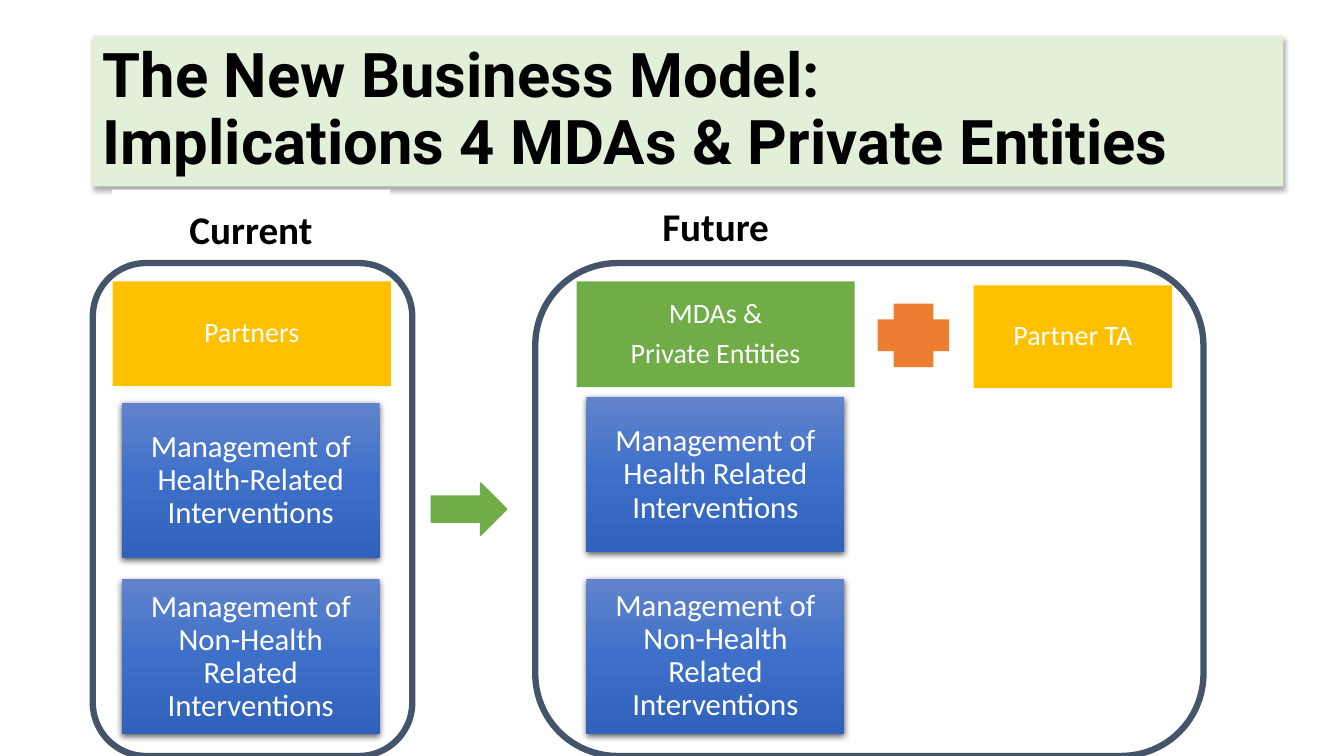
import copy

import pptx
import pptx.dml.color
import pptx.enum.shapes
import pptx.enum.text
import pptx.oxml.ns
import pptx.util
from lxml import etree

Cm = pptx.util.Cm
Pt = pptx.util.Pt
Shape = pptx.enum.shapes.MSO_SHAPE
Align = pptx.enum.text.PP_ALIGN
qn = pptx.oxml.ns.qn


class Theme:
    pale_green, green, amber, orange = "E2F0D9", "70AD47", "FFC000", "ED7D31"
    navy, white, black = "44546A", "FFFFFF", "000000"
    card_gradient = ((0, "6183CB"), (0.5, "3E70CA"), (1, "3062BB"))
    title_font, body_font = "Roboto", "Calibri"
    title_size, heading_size, card_size, owner_size = 44, 28, 22, 20
    frame_width = 4.5


def rgb(value):
    return pptx.dml.color.RGBColor.from_string(value)


def assign(target, values):
    for name, value in values.items():
        setattr(target, name, value)


class ModelSlide:
    def __init__(self, slide, theme):
        self.slide = slide
        self.theme = theme

    def shape(self, kind, box, fill=None, line=None, line_width=1.0):
        """Add a flat shape; box is left, top, width, height in centimetres."""
        shape = self.slide.shapes.add_shape(kind, *map(Cm, box))
        shape.shadow.inherit = False
        if fill:
            shape.fill.solid()
            shape.fill.fore_color.rgb = rgb(fill)
        else:
            shape.fill.background()
        if line:
            shape.line.color.rgb = rgb(line)
            shape.line.width = Pt(line_width)
        else:
            shape.line.fill.background()
        return shape

    def shadow(self, shape, opacity, blur, distance):
        """Drop a black shadow straight down; blur and distance in points."""
        effects = shape._element.spPr.find(qn("a:effectLst"))
        outer = etree.SubElement(
            effects, qn("a:outerShdw"), blurRad=str(Pt(blur)),
            dist=str(Pt(distance)), dir="5400000", algn="ctr", rotWithShape="0")
        color = etree.SubElement(outer, qn("a:srgbClr"), val=self.theme.black)
        etree.SubElement(color, qn("a:alpha"), val=str(opacity * 1000))

    def label(self, shape, text, size, color, font=None, bold=False,
              align=Align.CENTER, margins=(0.2, 0.2), after=0.35):
        """Set one paragraph per line; after is a share of the type size."""
        side, top = map(Cm, margins)
        frame = shape.text_frame
        assign(frame, {
            "text": text, "word_wrap": True,
            "vertical_anchor": pptx.enum.text.MSO_ANCHOR.MIDDLE,
            "margin_left": side, "margin_right": side,
            "margin_top": top, "margin_bottom": top})
        for paragraph in frame.paragraphs:
            assign(paragraph, {"alignment": align, "line_spacing": 0.9,
                               "space_before": Pt(0), "space_after": Pt(size * after)})
            for run in paragraph.runs:
                assign(run.font, {"name": font or self.theme.body_font,
                                  "size": Pt(size), "bold": bold})
                run.font.color.rgb = rgb(color)

    def title(self, text, box):
        theme = self.theme
        banner = self.shape(Shape.RECTANGLE, box, theme.pale_green)
        self.shadow(banner, 32, 3.5, 2.2)
        self.label(banner, text, theme.title_size, theme.black, theme.title_font,
                   True, Align.LEFT, (0.25, 0.13), 0)

    def heading(self, text, box):
        theme = self.theme
        plate = self.shape(Shape.RECTANGLE, box, theme.white)
        self.label(plate, text, theme.heading_size, theme.black, bold=True)

    def owner(self, text, box, fill):
        block = self.shape(Shape.RECTANGLE, box, fill)
        self.label(block, text, self.theme.owner_size, self.theme.white)

    def card(self, text, left, top):
        card = self.shape(Shape.RECTANGLE, (left, top, 6.5, 3.91))
        card.fill.gradient()
        card.fill.gradient_angle = 270
        stops = card._element.spPr.find(".//" + qn("a:gsLst"))
        stops.append(copy.deepcopy(stops[0]))
        for stop, (position, color) in zip(card.fill.gradient_stops,
                                           self.theme.card_gradient):
            stop.position = position
            stop.color.rgb = rgb(color)
        self.shadow(card, 63, 4.5, 1.5)
        self.label(card, text, self.theme.card_size, self.theme.white,
                   margins=(0.23, 0.23))

    def frame(self, left, width):
        self.shape(Shape.ROUNDED_RECTANGLE, (left, 6.63, width, 12.42),
                   line=self.theme.navy, line_width=self.theme.frame_width)


def main():
    deck = pptx.Presentation()
    deck.slide_width, deck.slide_height = Cm(33.87), Cm(19.05)
    theme = Theme()
    model = ModelSlide(deck.slides.add_slide(deck.slide_layouts[6]), theme)

    model.title("The New Business Model:\vImplications 4 MDAs & Private Entities",
                (2.34, 0.89, 30, 3.81))

    for health, left, tops in (("Health-Related", 3.07, (10.16, 14.6)),
                               ("Health Related", 14.78, (10.01, 14.58))):
        for scope, top in zip((health, "Non-Health Related"), tops):
            model.card(f"Management of {scope} Interventions", left, top)

    for owner, box, fill in (
            ("Partners", (2.84, 7.09, 7.01, 2.64), theme.amber),
            ("MDAs &\nPrivate Entities", (14.53, 7.09, 7.01, 2.67), theme.green),
            ("Partner TA", (24.54, 7.19, 5, 2.59), theme.amber)):
        model.owner(owner, box, fill)

    model.shape(Shape.RIGHT_ARROW, (10.87, 12.17, 1.9, 1.32), theme.green, theme.green)
    model.shape(Shape.CROSS, (22.12, 7.65, 1.8, 1.6), theme.orange)

    model.heading("Current", (2.82, 4.78, 7.01, 2.13))
    model.heading("Future", (14.53, 5.05, 7.01, 1.45))
    for left, width in ((2.34, 8.05), (13.49, 16.84)):
        model.frame(left, width)

    deck.save("out.pptx")


if __name__ == "__main__":
    main()
